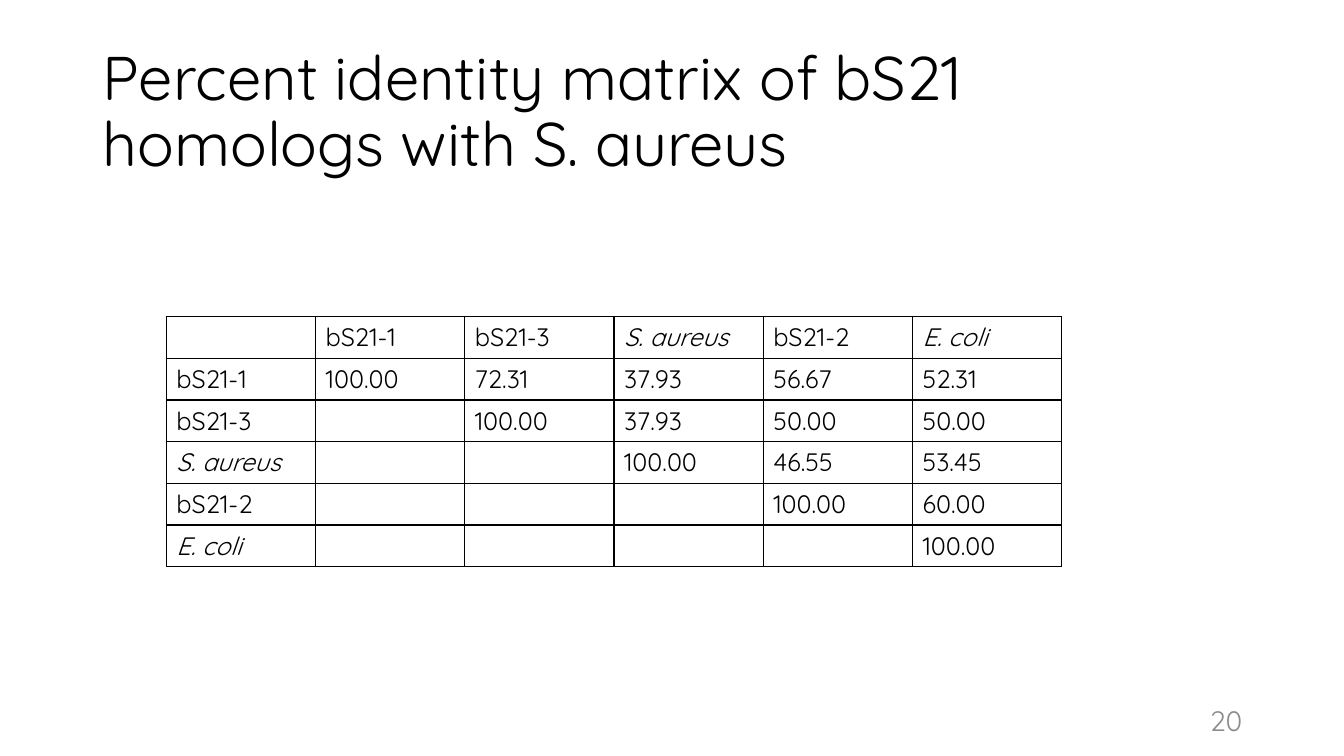
from dataclasses import dataclass

from lxml.etree import SubElement
from pptx import Presentation
from pptx.dml.color import RGBColor
from pptx.enum.text import MSO_ANCHOR, MSO_AUTO_SIZE, PP_ALIGN
from pptx.oxml.ns import qn
from pptx.util import Inches, Pt


@dataclass(frozen=True)
class Theme:
    """Font, colours and type sizes of the slide."""
    font: str = "Quicksand"
    ink: str = "000000"
    muted: str = "8C8C8C"
    title_size: int = 44
    table_size: int = 18
    number_size: int = 20
    border_width: int = 1


THEME = Theme()
HOMOLOGS = ["bS21-1", "bS21-3", "S. aureus", "bS21-2", "E. coli"]
SPECIES = {"S. aureus", "E. coli"}
IDENTITIES = [
    ["100.00", "72.31", "37.93", "56.67", "52.31"],
    ["100.00", "37.93", "50.00", "50.00"],
    ["100.00", "46.55", "53.45"],
    ["100.00", "60.00"],
    ["100.00"],
]


def add_span(para, text, size, color, italic=False):
    """Add one formatted run to a paragraph."""
    span = para.add_run()
    span.text = text
    span.font.name = THEME.font
    span.font.size = Pt(size)
    span.font.italic = italic
    span.font.color.rgb = RGBColor.from_string(color)


def place(shape, left, top, width, height):
    """Position a shape, with lengths in inches."""
    shape.left, shape.top = Inches(left), Inches(top)
    shape.width, shape.height = Inches(width), Inches(height)


def set_title(page, text):
    """Fill and format the title placeholder."""
    title = page.shapes.title
    place(title, 0.92, 0.4, 11.5, 1.45)
    frame = title.text_frame
    frame.word_wrap = True
    frame.auto_size = MSO_AUTO_SIZE.NONE
    frame.vertical_anchor = MSO_ANCHOR.MIDDLE
    para = frame.paragraphs[0]
    para.alignment = PP_ALIGN.LEFT
    para.line_spacing = 0.9
    add_span(para, text, THEME.title_size, THEME.ink)


def outline_cell(cell):
    """Clear a cell's fill and draw its four borders."""
    properties = cell._tc.get_or_add_tcPr()
    for side in ("a:lnL", "a:lnR", "a:lnT", "a:lnB"):
        line = SubElement(properties, qn(side), w=str(Pt(THEME.border_width)))
        fill = SubElement(line, qn("a:solidFill"))
        SubElement(fill, qn("a:srgbClr"), val=THEME.ink)
    cell.fill.background()


def add_matrix(page):
    """Add the upper triangular identity matrix as a table."""
    rows = [["", *HOMOLOGS]]
    for index, (name, values) in enumerate(zip(HOMOLOGS, IDENTITIES)):
        rows.append([name, *[""] * index, *values])
    count = len(rows)
    column_width, row_height = 1.48, 0.41
    table = page.shapes.add_table(
        count, count, Inches(1.65), Inches(3.14),
        Inches(column_width * count), Inches(row_height * count)).table
    table.first_row = table.horz_banding = False
    for column in table.columns:
        column.width = Inches(column_width)
    for row, texts in zip(table.rows, rows):
        row.height = Inches(row_height)
        for cell, text in zip(row.cells, texts):
            outline_cell(cell)
            para = cell.text_frame.paragraphs[0]
            para.font.size = Pt(THEME.table_size)
            if text:
                add_span(para, text, THEME.table_size, THEME.ink, text in SPECIES)


def add_page_number(page, number):
    """Add the page number at the lower right."""
    box = page.shapes.add_textbox(Inches(9.42), Inches(6.95), Inches(3), Inches(0.4))
    frame = box.text_frame
    frame.word_wrap = True
    frame.vertical_anchor = MSO_ANCHOR.MIDDLE
    para = frame.paragraphs[0]
    para.alignment = PP_ALIGN.RIGHT
    add_span(para, number, THEME.number_size, THEME.muted)


def main():
    """Build the slide and save the deck."""
    deck = Presentation()
    deck.slide_width, deck.slide_height = Inches(13.33), Inches(7.5)
    page = deck.slides.add_slide(deck.slide_layouts[5])
    set_title(page, "Percent identity matrix of bS21 homologs with S. aureus")
    add_matrix(page)
    add_page_number(page, "20")
    deck.save("out.pptx")


if __name__ == "__main__":
    main()
